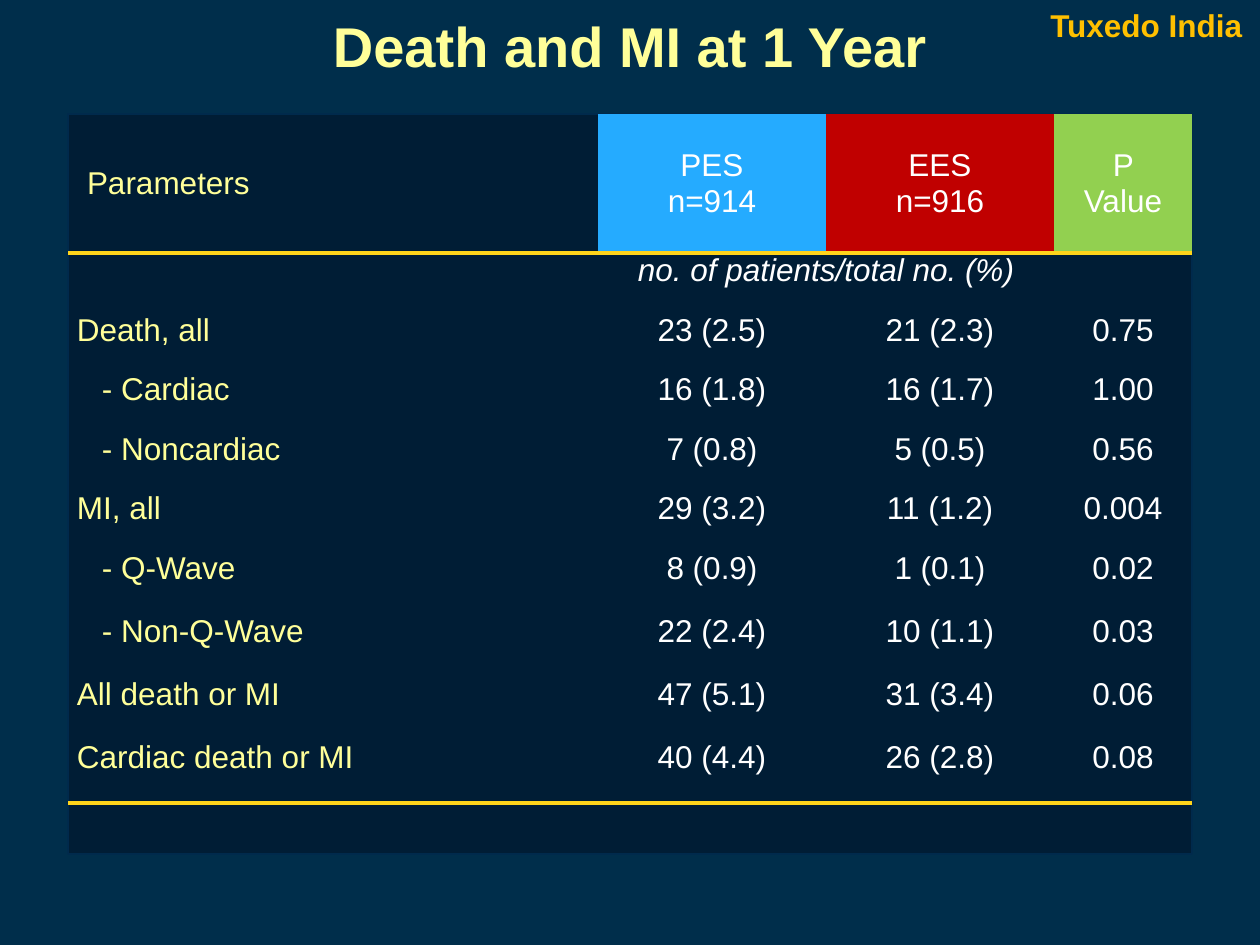
from dataclasses import dataclass

from lxml import etree
from pptx import Presentation, util as u
from pptx.dml.color import RGBColor
from pptx.enum import shapes, text
from pptx.oxml import ns

PX = u.Inches(1) / 126
NO_STYLE = "{2D5ABB26-0587-4C30-8999-92F81FD0307C}"


@dataclass(frozen=True)
class Theme:
    font: str = "Arial"
    background: str = "002E4B"
    panel: str = "001B32"
    panel_edge: str = "002A4C"
    label: str = "FFFF99"
    value: str = "FFFFFF"
    rule: str = "FFD41B"
    study: str = "FFC000"
    pes: str = "25ABFF"
    ees: str = "C00000"
    p_value: str = "92D050"
    title_size: int = 32
    text_size: int = 18


def px(length):
    return u.Emu(round(length * PX))


def rgb(code):
    return RGBColor.from_string(code)


class Slide:
    """The current page together with the theme it is drawn in."""

    def __init__(self, page, theme):
        self.page, self.theme = page, theme
        page.background.fill.solid()
        page.background.fill.fore_color.rgb = rgb(theme.background)

    def add_span(self, para, words, color, size=None, bold=False, italic=False, align=text.PP_ALIGN.LEFT):
        para.alignment = align
        span = para.add_run()
        span.text = words
        font = span.font
        font.name, font.size = self.theme.font, u.Pt(size or self.theme.text_size)
        font.bold, font.italic = bold, italic
        font.color.rgb = rgb(color)

    def title(self, words, left, top, width, height):
        box = self.page.shapes.title
        box.left, box.top, box.width, box.height = map(px, (left, top, width, height))
        frame = box.text_frame
        frame.vertical_anchor = text.MSO_ANCHOR.TOP
        frame.margin_left = frame.margin_right = frame.margin_top = frame.margin_bottom = px(6)
        self.add_span(frame.paragraphs[0], words, self.theme.label, self.theme.title_size,
                      bold=True, align=text.PP_ALIGN.CENTER)

    def label(self, words, left, top, width, height):
        box = self.page.shapes.add_textbox(*map(px, (left, top, width, height)))
        box.text_frame.word_wrap = True
        box.text_frame.auto_size = text.MSO_AUTO_SIZE.SHAPE_TO_FIT_TEXT
        self.add_span(box.text_frame.paragraphs[0], words, self.theme.study, bold=True)

    def panel(self, left, top, width, height, opacity):
        box = self.page.shapes.add_shape(shapes.MSO_SHAPE.RECTANGLE, *map(px, (left, top, width, height)))
        box.shadow.inherit = False
        box.fill.solid()
        box.fill.fore_color.rgb = rgb(self.theme.panel)
        color = box._element.spPr.find(ns.qn("a:solidFill")).find(ns.qn("a:srgbClr"))
        etree.SubElement(color, ns.qn("a:alpha"), val=str(opacity * 1000))
        box.line.color.rgb = rgb(self.theme.panel_edge)
        box.line.width = u.Pt(0.75)

    def table(self, left, top, columns, rows):
        """Add a plain table with the given column widths and row heights."""
        frame = self.page.shapes.add_table(
            len(rows), len(columns), *map(px, (left, top, sum(columns), sum(rows))))
        grid = frame.table
        grid.first_row = grid.horz_banding = False
        grid._tbl.tblPr.find(ns.qn("a:tableStyleId")).text = NO_STYLE
        for column, width in zip(grid.columns, columns):
            column.width = px(width)
        for row, height in zip(grid.rows, rows):
            row.height = px(height)
        for cell in grid.iter_cells():
            cell.fill.background()
            cell.margin_left = cell.margin_right = px(9)
            cell.margin_top = cell.margin_bottom = 0
        return grid

    def header_cell(self, cell, lines, color, fill=None):
        cell.vertical_anchor = text.MSO_ANCHOR.MIDDLE
        cell.margin_left = cell.margin_right = px(19)
        cell.margin_top = cell.margin_bottom = px(6)
        if fill:
            cell.fill.solid()
            cell.fill.fore_color.rgb = rgb(fill)
        frame = cell.text_frame
        align = text.PP_ALIGN.CENTER if fill else text.PP_ALIGN.LEFT
        for index, line in enumerate(lines):
            para = frame.add_paragraph() if index else frame.paragraphs[0]
            self.add_span(para, line, color, align=align)

    def label_cell(self, cell, words):
        """Fill in a row label; a leading dash marks an indented sub-row."""
        para = cell.text_frame.paragraphs[0]
        if words.startswith("-"):
            properties = para._p.get_or_add_pPr()
            properties.set("marL", str(px(25)))
            properties.set("indent", "0")
        self.add_span(para, words, self.theme.label)

    def value_cell(self, cell, words, italic=False):
        self.add_span(cell.text_frame.paragraphs[0], words, self.theme.value,
                      italic=italic, align=text.PP_ALIGN.CENTER)

    def rule_below(self, row):
        for cell in row.cells:
            line = etree.Element(ns.qn("a:lnB"), w=str(u.Pt(2.25)))
            fill = etree.SubElement(line, ns.qn("a:solidFill"))
            etree.SubElement(fill, ns.qn("a:srgbClr"), val=self.theme.rule)
            cell._tc.get_or_add_tcPr().insert(0, line)


OUTCOMES = [
    ("Death, all", "23 (2.5)", "21 (2.3)", "0.75"),
    ("- Cardiac", "16 (1.8)", "16 (1.7)", "1.00"),
    ("- Noncardiac", "7 (0.8)", "5 (0.5)", "0.56"),
    ("MI, all", "29 (3.2)", "11 (1.2)", "0.004"),
    ("- Q-Wave", "8 (0.9)", "1 (0.1)", "0.02"),
    ("- Non-Q-Wave", "22 (2.4)", "10 (1.1)", "0.03"),
    ("All death or MI", "47 (5.1)", "31 (3.4)", "0.06"),
    ("Cardiac death or MI", "40 (4.4)", "26 (2.8)", "0.08"),
]


def main():
    theme = Theme()
    deck = Presentation()
    deck.slide_width, deck.slide_height = px(1260), px(945)
    slide = Slide(deck.slides.add_slide(deck.slide_layouts[5]), theme)

    slide.panel(68, 114, 1124, 740, opacity=87)
    grid = slide.table(68, 114, [530, 228, 228, 138], [139, 60, 59, 60, 59, 60] + [63] * 4)
    headers = [
        (["Parameters"], theme.label, None),
        (["PES", "n=914"], theme.value, theme.pes),
        (["EES", "n=916"], theme.value, theme.ees),
        (["P Value"], theme.value, theme.p_value),
    ]
    for column, header in enumerate(headers):
        slide.header_cell(grid.cell(0, column), *header)

    grid.cell(1, 1).merge(grid.cell(1, 2))
    slide.value_cell(grid.cell(1, 1), "no. of patients/total no. (%)", italic=True)
    for row, (name, *values) in enumerate(OUTCOMES, start=2):
        slide.label_cell(grid.cell(row, 0), name)
        for column, value in enumerate(values, start=1):
            slide.value_cell(grid.cell(row, column), value)
    for row in (0, len(OUTCOMES) + 1):
        slide.rule_below(grid.rows[row])

    slide.title("Death and MI at 1 Year", 63, 5, 1134, 110)
    slide.label("Tuxedo India", 1038, 0, 229, 50)
    deck.save("out.pptx")


if __name__ == "__main__":
    main()
